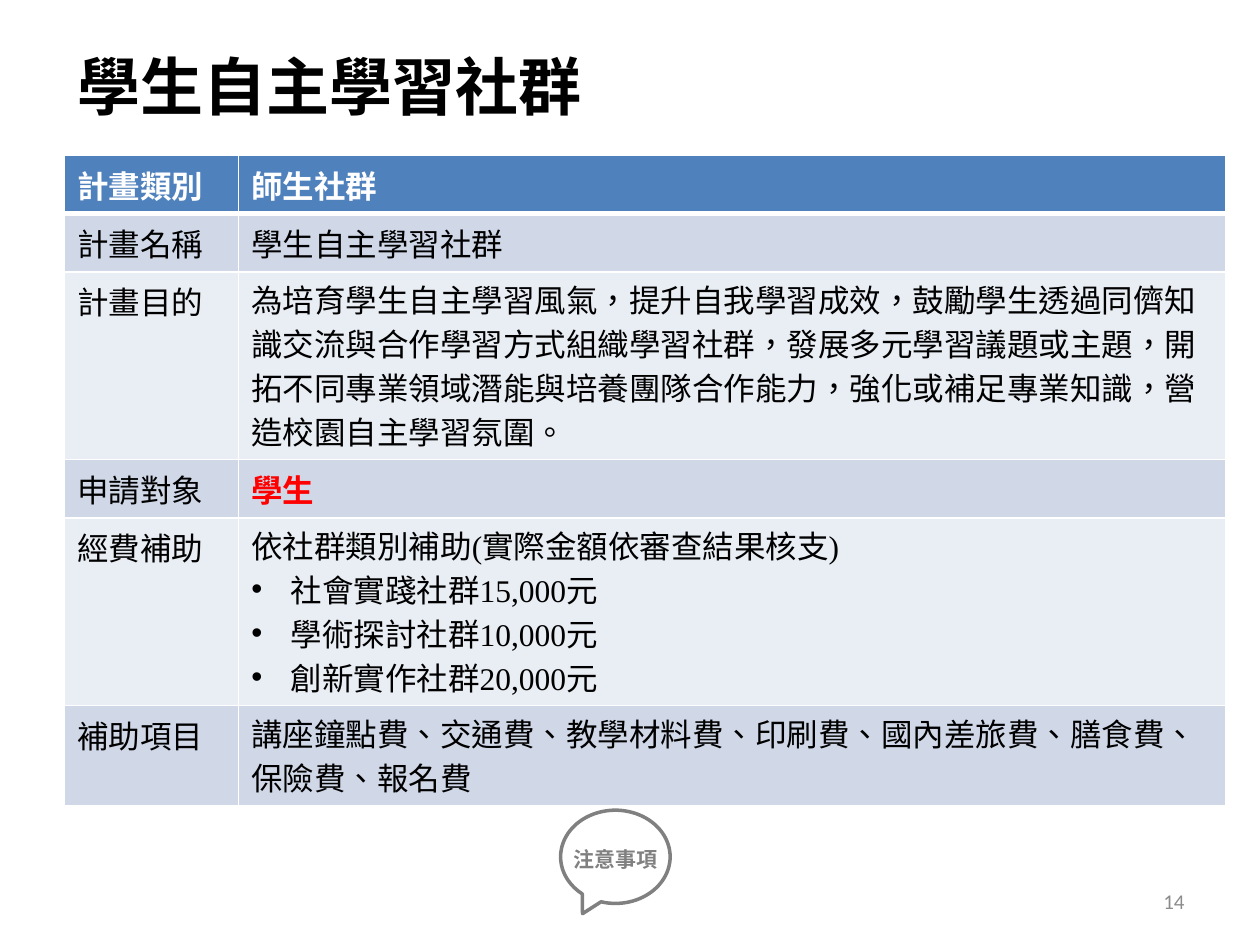
from lxml.etree import SubElement
from pptx import Presentation
from pptx.dml.color import RGBColor
from pptx.enum.lang import MSO_LANGUAGE_ID as Lang
from pptx.enum.shapes import MSO_SHAPE as Shape
from pptx.enum.text import MSO_ANCHOR as Anchor, MSO_AUTO_SIZE as AutoSize, PP_ALIGN as Align
from pptx.oxml.ns import qn
from pptx.util import Pt

COLORS = {
    "header": "4F81BD", "band_dark": "D0D8E8", "band_light": "E9EDF4",
    "white": "FFFFFF", "black": "000000", "red": "FF0000",
    "callout": "808080", "page": "8C8C8C",
}
SERIF, SANS, PAGE_FONT = "Times New Roman", "Noto Sans CJK SC", "Calibri"
BODY = {"name": SERIF, "size": Pt(18), "bold": False}
BODY_BOLD = {**BODY, "bold": True}
LINE_SPACING = Pt(25)
BULLET_INDENT = Pt(22.5)

COLUMN_WIDTHS = [99.4, 563.8]
# Label, paragraphs (a leading bullet marks a list item), row height
PLAN_ROWS = [
    ("計畫類別", ["師生社群"], 29),
    ("計畫名稱", ["學生自主學習社群"], 29),
    ("計畫目的", ["為培育學生自主學習風氣，提升自我學習成效，鼓勵學生透過同儕知識交流與合作學習方式"
              "組織學習社群，發展多元學習議題或主題，開拓不同專業領域潛能與培養團隊合作能力，"
              "強化或補足專業知識，營造校園自主學習氛圍。"], 101.5),
    ("申請對象", ["學生"], 29),
    ("經費補助", ["依社群類別補助(實際金額依審查結果核支)", "•社會實踐社群15,000元",
              "•學術探討社群10,000元", "•創新實作社群20,000元"], 101.5),
    ("補助項目", ["講座鐘點費、交通費、教學材料費、印刷費、國內差旅費、膳食費、保險費、報名費"], 57),
]
SPACED_LABELS = {"計畫目的", "經費補助", "補助項目"}
HEADER_LABEL, TARGET_LABEL = "計畫類別", "申請對象"


def rgb(key):
    return RGBColor.from_string(COLORS[key])


def write(paragraph, text, style, color):
    run = paragraph.add_run()
    run.text = text
    for attribute, value in style.items():
        setattr(run.font, attribute, value)
    run.font.color.rgb = rgb(color)
    run.font.language_id = Lang.TRADITIONAL_CHINESE
    if style["name"] == SANS:
        SubElement(run.font._element, qn("a:ea"), typeface=SANS)


def add_text(shapes, box, text, style, color, align=Align.LEFT, **frame_format):
    frame = shapes.add_textbox(*map(Pt, box)).text_frame
    for attribute, value in {"word_wrap": True, **frame_format}.items():
        setattr(frame, attribute, value)
    frame.paragraphs[0].alignment = align
    write(frame.paragraphs[0], text, style, color)


def add_bullet(paragraph):
    properties = paragraph._p.get_or_add_pPr()
    properties.set("marL", str(BULLET_INDENT))
    properties.set("indent", str(-BULLET_INDENT))
    SubElement(properties, qn("a:buFont"), typeface="Arial")
    SubElement(properties, qn("a:buChar"), char="•")


def set_borders(cell, **widths):
    properties = cell._tc.get_or_add_tcPr()
    for side in "LRTB":
        width = Pt(widths.get(side, 1))
        border = SubElement(properties, qn(f"a:ln{side}"), w=str(width))
        fill = SubElement(border, qn("a:solidFill"))
        SubElement(fill, qn("a:srgbClr"), val=COLORS["white"])


def fill_cell(cell, lines, style, color, fill, spaced=False, **widths):
    set_borders(cell, **widths)
    cell.fill.solid()
    cell.fill.fore_color.rgb = rgb(fill)
    frame = cell.text_frame
    for index, line in enumerate(lines):
        paragraph = frame.add_paragraph() if index else frame.paragraphs[0]
        if spaced:
            paragraph.line_spacing = LINE_SPACING
        if line.startswith("•"):
            add_bullet(paragraph)
        write(paragraph, line.lstrip("•"), style, color)


def add_plan_table(shapes):
    height = sum(row[2] for row in PLAN_ROWS)
    plan = shapes.add_table(len(PLAN_ROWS), 2, Pt(37), Pt(88.8),
                            Pt(sum(COLUMN_WIDTHS)), Pt(height)).table
    for column, width in zip(plan.columns, COLUMN_WIDTHS):
        column.width = Pt(width)
    for index, (label, content, row_height) in enumerate(PLAN_ROWS):
        plan.rows[index].height = Pt(row_height)
        label_look = content_look = (BODY, "black")
        fill = "band_dark" if index % 2 else "band_light"
        # The thick rule lies between header and body
        widths = {0: {"B": 3}, 1: {"T": 3}}.get(index, {})
        if label == HEADER_LABEL:
            label_look = content_look = (BODY_BOLD, "white")
            fill = "header"
        elif label == TARGET_LABEL:
            content_look = (BODY_BOLD, "red")
        fill_cell(plan.cell(index, 0), [label], *label_look, fill, **widths)
        fill_cell(plan.cell(index, 1), content, *content_look, fill,
                  label in SPACED_LABELS, **widths)


def add_notes_callout(shapes):
    group = shapes.add_group_shape()
    add_text(group.shapes, (320.4, 480.2, 63.4, 21.8), "注意事項",
             {"name": SANS, "size": Pt(12), "bold": True}, "callout",
             auto_size=AutoSize.SHAPE_TO_FIT_TEXT)
    bubble = group.shapes.add_shape(Shape.OVAL_CALLOUT, *map(Pt, (320.4, 463, 62.6, 53.3)))
    bubble.shadow.inherit = False
    bubble.adjustments[0], bubble.adjustments[1] = -0.3, 0.61
    bubble.fill.background()
    bubble.line.color.rgb = rgb("callout")
    bubble.line.width = Pt(2)


def main():
    deck = Presentation()
    deck.slide_width, deck.slide_height = Pt(720), Pt(540)
    shapes = deck.slides.add_slide(deck.slide_layouts[6]).shapes

    # Plan details
    add_plan_table(shapes)
    # Title
    add_text(shapes, (37, 21, 454, 55.4), "學生自主學習社群",
             {"name": SANS, "size": Pt(36), "bold": True}, "black",
             vertical_anchor=Anchor.MIDDLE)
    # Page number
    add_text(shapes, (516, 500.5, 168, 28.8), "14",
             {"name": PAGE_FONT, "size": Pt(12)}, "page", Align.RIGHT,
             vertical_anchor=Anchor.MIDDLE)
    # Notes callout
    add_notes_callout(shapes)

    deck.save("out.pptx")


if __name__ == "__main__":
    main()
